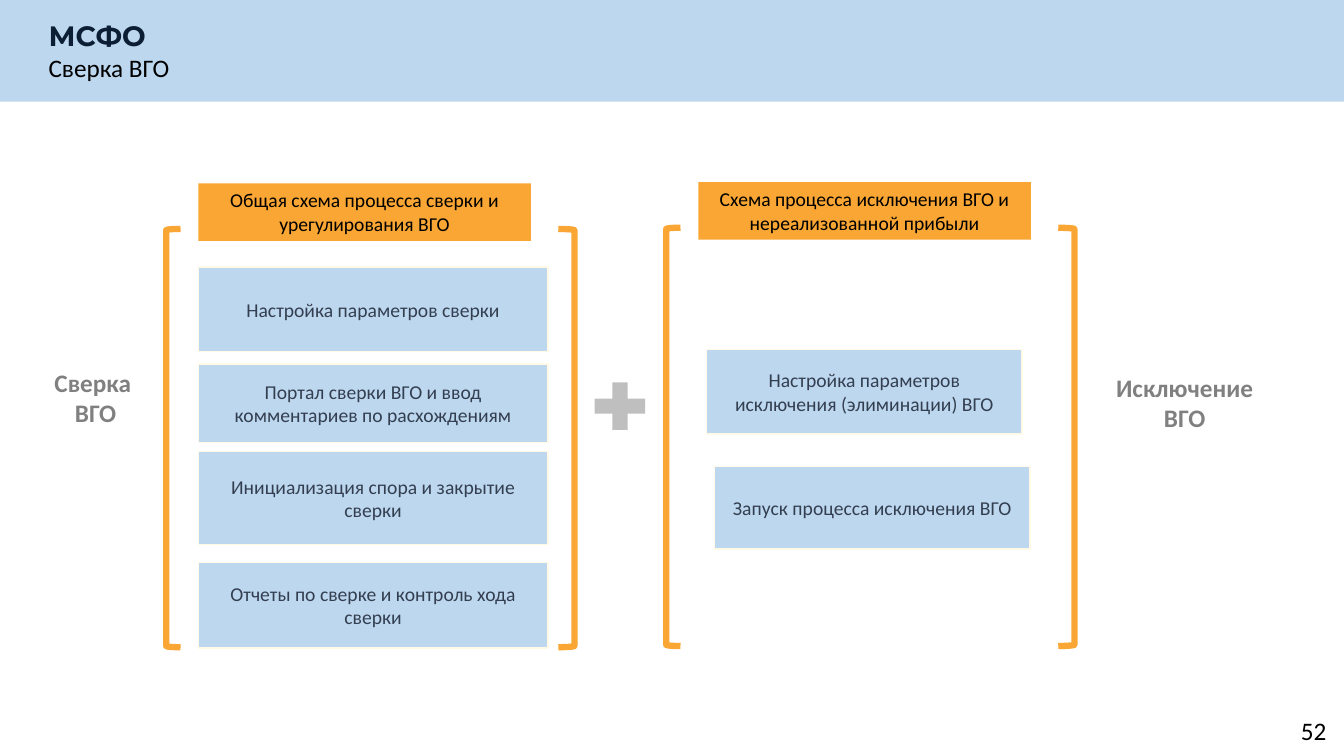
"""Build the slide on reconciling and eliminating intragroup turnover."""
from pptx import Presentation
from pptx.dml.color import RGBColor
from pptx.enum.shapes import MSO_SHAPE as Shape
from pptx.enum.text import MSO_ANCHOR as Anchor, PP_ALIGN as Align
from pptx.util import Cm, Pt

COLORS = {
    "band": "BDD7EE", "title": "0C1E34", "black": "000000", "accent": "FAA634",
    "step_text": "333F50", "step_line": "FFF9E6", "label": "808080", "plus": "BFBFBF",
}
TITLE, SUBTITLE, PAGE = "МСФО", "Сверка ВГО", "52"
GROUPS = [
    {
        "header": "Общая схема процесса сверки и урегулирования ВГО",
        "offset": (0, 0),
        "step_width": 8.81,
        "steps": [
            ("Настройка параметров сверки", 5, 6.73, 2.13),
            ("Портал сверки ВГО и ввод комментариев по расхождениям", 5, 9.17, 1.98),
            ("Инициализация спора и закрытие сверки", 5, 11.38, 2.34),
            ("Отчеты по сверке и контроль хода сверки", 5, 14.17, 2.16),
        ],
    },
    {
        "header": "Схема процесса исключения ВГО и нереализованной прибыли",
        "offset": (12.6, -0.03),
        "step_width": 7.95,
        "steps": [
            ("Настройка параметров исключения (элиминации) ВГО", 17.81, 8.81, 2.13),
            ("Запуск процесса исключения ВГО", 18.01, 11.76, 2.08),
        ],
    },
]
BRACKETS = [(Shape.LEFT_BRACKET, 4.19, 0.36), (Shape.RIGHT_BRACKET, 14.07, 0.41)]
BRACKET_TOP, BRACKET_HEIGHT = 5.77, 10.54
HEADER_BOX = (5, 4.62, 8.38, 1.45)
LABELS = [
    ("Сверка \nВГО", (-0.18, 9.12, 5.18, 1.8)),
    ("Исключение ВГО", (27.48, 9.25, 4.75, 1.8)),
]


def color(name):
    return RGBColor.from_string(COLORS[name])


def style_font(font, size, color_name, bold=False, family="Calibri"):
    font.name, font.size, font.bold = family, Pt(size), bold
    font.color.rgb = color(color_name)


def write(shape, text, size, color_name, bold=False, align=Align.CENTER, anchor=Anchor.TOP):
    frame = shape.text_frame
    frame.word_wrap = True
    frame.vertical_anchor = anchor
    frame.text = text
    for paragraph in frame.paragraphs:
        paragraph.alignment = align
        style_font(paragraph.font, size, color_name, bold)


def add_shape(slide, kind, box, fill=None, line=None, line_width=1):
    shape = slide.shapes.add_shape(kind, *map(Cm, box))
    shape.shadow.inherit = False
    if fill:
        shape.fill.solid()
        shape.fill.fore_color.rgb = color(fill)
    else:
        shape.fill.background()
    if line:
        shape.line.color.rgb = color(line)
        shape.line.width = Pt(line_width)
    else:
        shape.line.fill.background()
    return shape


def add_text(slide, box, *args, **kwargs):
    write(slide.shapes.add_textbox(*map(Cm, box)), *args, **kwargs)


def add_title(slide):
    title = slide.shapes.title
    title.left, title.top, title.width, title.height = map(Cm, (0.97, 0.33, 24.2, 1.88))
    title.text_frame.vertical_anchor = Anchor.MIDDLE
    paragraph = title.text_frame.paragraphs[0]
    paragraph.alignment = Align.LEFT
    heading = paragraph.add_run()
    heading.text = TITLE
    style_font(heading.font, 20, "title", True, "Montserrat")
    paragraph.add_line_break()
    subtitle = paragraph.add_run()
    subtitle.text = SUBTITLE
    style_font(subtitle.font, 18, "black")
    band = add_shape(slide, Shape.RECTANGLE, (0, -0.03, 33.87, 2.59), "band")
    title.element.addprevious(band.element)


def add_group(slide, group):
    shift, drop = group["offset"]
    for kind, left, width in BRACKETS:
        box = (left + shift, BRACKET_TOP + drop, width, BRACKET_HEIGHT)
        add_shape(slide, kind, box, line="accent", line_width=4.5)
    left, top, width, height = HEADER_BOX
    header = add_shape(slide, Shape.RECTANGLE, (left + shift, top + drop, width, height), "accent")
    write(header, group["header"], 14, "black")
    for text, left, top, height in group["steps"]:
        box = (left, top, group["step_width"], height)
        step = add_shape(slide, Shape.RECTANGLE, box, "band", "step_line")
        write(step, text, 14, "step_text", anchor=Anchor.MIDDLE)


def main():
    presentation = Presentation()
    presentation.slide_width, presentation.slide_height = Cm(33.87), Cm(19.05)
    slide = presentation.slides.add_slide(presentation.slide_layouts[5])
    add_title(slide)
    add_text(slide, (26.06, 17.91, 7.62, 1.02), PAGE, 18, "black", align=Align.RIGHT)
    for group in GROUPS:
        add_group(slide, group)
    for text, box in LABELS:
        add_text(slide, box, text, 18, "label", bold=True)
    add_shape(slide, Shape.MATH_PLUS, (14.76, 9.42, 1.73, 1.63), "plus")
    presentation.save("out.pptx")


if __name__ == "__main__":
    main()
